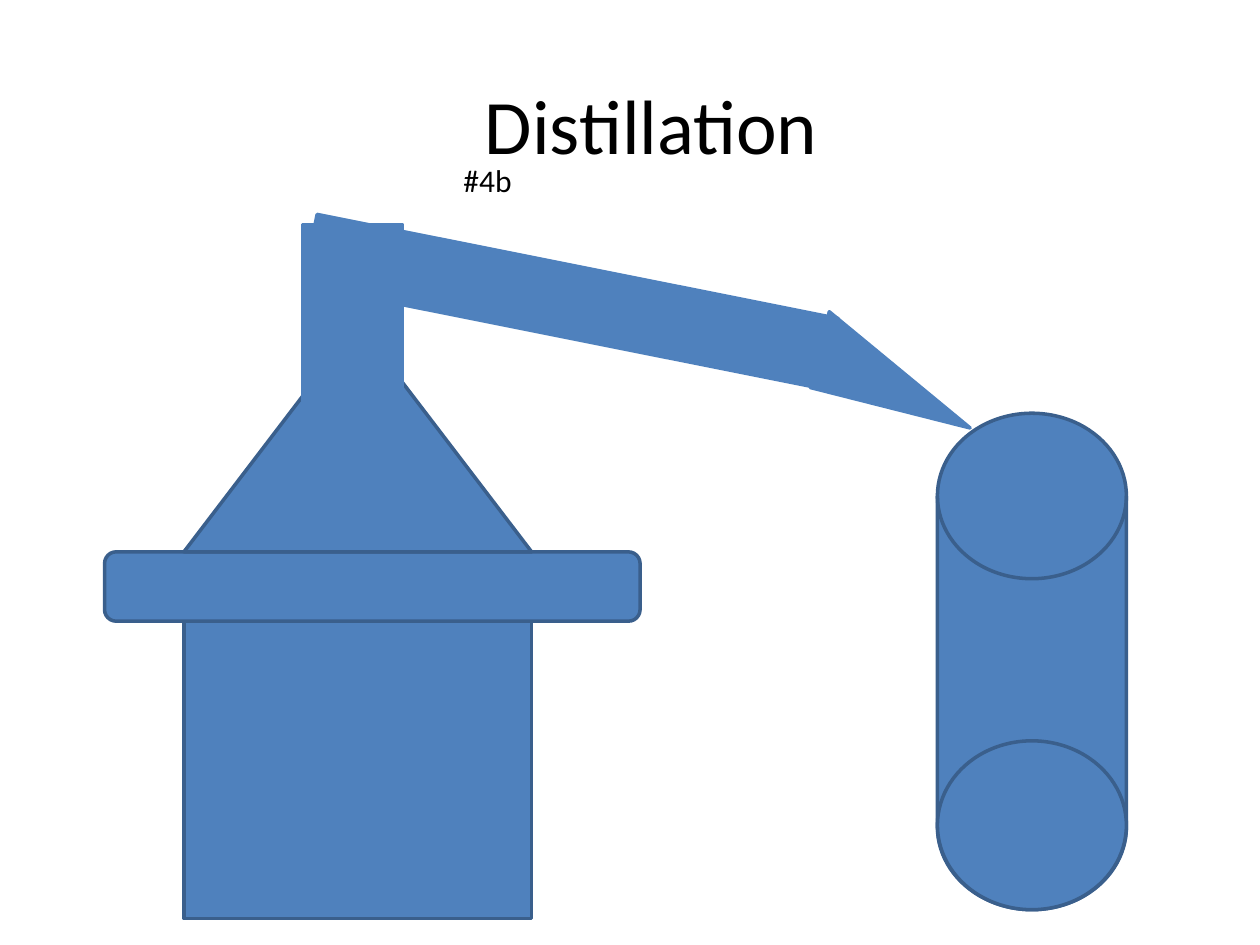
import dataclasses

import pptx
import pptx.dml.color
import pptx.enum.shapes
import pptx.enum.text
import pptx.util

SHAPES = pptx.enum.shapes.MSO_SHAPE
ALIGN = pptx.enum.text.PP_ALIGN
ANCHOR = pptx.enum.text.MSO_ANCHOR
AUTO_SIZE = pptx.enum.text.MSO_AUTO_SIZE
COLUMNS, ROWS = 100, 75


@dataclasses.dataclass(frozen=True)
class Theme:
    font: str = "Calibri"
    ink: str = "000000"
    fill: str = "4F81BD"
    outline: str = "3A5F8C"
    title_size: int = 44
    label_size: int = 18
    line_width: int = 2


THEME = Theme()


def color(value):
    return pptx.dml.color.RGBColor.from_string(value)


def apply_format(target, values):
    for name, value in values.items():
        setattr(target, name, value)


def grid_area(deck, left, top, width, height):
    column = deck.slide_width / COLUMNS
    row = deck.slide_height / ROWS
    return [round(length) for length in
            (left * column, top * row, width * column, height * row)]


def add_text(deck, page, area, text, size, frame_format, alignment):
    box = page.shapes.add_textbox(*grid_area(deck, *area))
    apply_format(box.text_frame, {"word_wrap": True, **frame_format})
    para = box.text_frame.paragraphs[0]
    para.alignment = alignment
    span = para.add_run()
    span.text = text
    apply_format(span.font, {"name": THEME.font, "size": pptx.util.Pt(size)})
    span.font.color.rgb = color(THEME.ink)


def add_part(deck, page, kind, area, outline=THEME.outline, rotation=0):
    part = page.shapes.add_shape(kind, *grid_area(deck, *area))
    part.rotation = rotation
    part.shadow.inherit = False
    part.fill.solid()
    part.fill.fore_color.rgb = color(THEME.fill)
    part.line.color.rgb = color(outline)
    part.line.width = pptx.util.Pt(THEME.line_width)
    return part


def add_receiver(deck, page):
    left, width, top, bottom = 74.4, 15, 32.8, 72.2
    base_height = 13.4
    add_part(deck, page, SHAPES.FLOWCHART_MAGNETIC_DISK,
             (left, top, width, bottom - top))
    add_part(deck, page, SHAPES.OVAL,
             (left, bottom - base_height, width, base_height))


def add_still(deck, page):
    left, width = 14.6, 27.6
    rim_top, rim_height = 43.8, 5.5
    cone_height, pot_height = 18.1, 23.6
    add_part(deck, page, SHAPES.FLOWCHART_PROCESS,
             (left, rim_top + rim_height, width, pot_height))
    add_part(deck, page, SHAPES.FLOWCHART_ALTERNATE_PROCESS,
             (8.3, rim_top, 42.5, rim_height))
    add_part(deck, page, SHAPES.ISOSCELES_TRIANGLE,
             (left, rim_top - cone_height, width, cone_height))


def add_pipe(deck, page):
    add_part(deck, page, SHAPES.FLOWCHART_PROCESS,
             (24, 17.8, 7.9, 14.2), THEME.fill)
    add_part(deck, page, SHAPES.FLOWCHART_PROCESS,
             (24.2, 21.1, 42.2, 5.7), THEME.fill, 11.3)
    spout = add_part(deck, page, SHAPES.ISOSCELES_TRIANGLE,
                     (68.3, 22.8, 6.2, 13.1), THEME.fill, 104.2)
    spout.adjustments[0] = 1


def main():
    deck = pptx.Presentation()
    apply_format(deck, {"slide_width": pptx.util.Inches(10),
                        "slide_height": pptx.util.Inches(7.5)})
    page = deck.slides.add_slide(deck.slide_layouts[6])
    add_text(deck, page, (6.7, 3.6, 90, 12.5), "Distillation",
             THEME.title_size, {"vertical_anchor": ANCHOR.MIDDLE}, ALIGN.CENTER)
    add_text(deck, page, (35.8, 12.3, 47.2, 4), "#4b",
             THEME.label_size, {"auto_size": AUTO_SIZE.SHAPE_TO_FIT_TEXT},
             ALIGN.LEFT)
    add_receiver(deck, page)
    add_still(deck, page)
    add_pipe(deck, page)
    deck.save("out.pptx")


if __name__ == "__main__":
    main()
